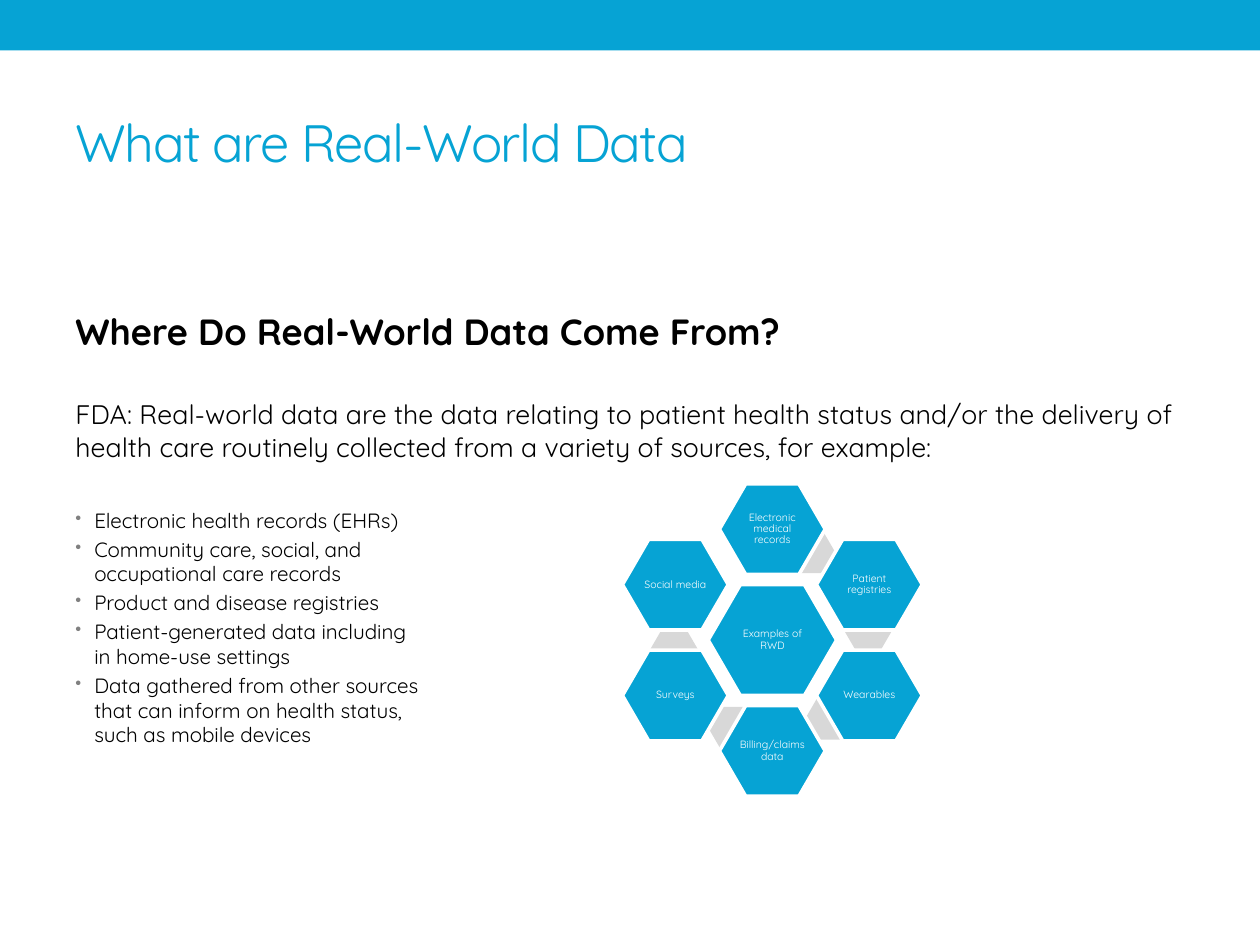
from lxml.etree import SubElement
from pptx import Presentation
from pptx.dml.color import RGBColor
from pptx.enum.shapes import MSO_SHAPE
from pptx.enum.text import MSO_ANCHOR, PP_ALIGN
from pptx.oxml.ns import qn
from pptx.util import Inches, Pt

COLORS = {"blue": "06A3D4", "gray": "D8D8D8", "dot": "808080", "white": "FFFFFF", "black": "000000"}
FONT = "Quicksand"
UNIT = 0.1
MID = (61.3, 50.8)
STEP = (7.7, 4.4)
RING = [
    ("Electronic medical records", 0, -2, (3.1, -6.95)),
    ("Patient registries", 1, -1, (7.6, -0.75)),
    ("Wearables", 1, 1, (4.5, 6.25)),
    ("Billing/claims data", 0, 2, (-3.2, 6.95)),
    ("Surveys", -1, 1, (-7.8, 0.75)),
    ("Social media", -1, -1, None),
]
LEAD = (
    "FDA: Real-world data are the data relating to patient health status and/or the delivery "
    "of health care routinely collected from a variety of sources, for example:"
)
ITEMS = [
    "Electronic health records (EHRs)",
    "Community care, social, and \voccupational care records",
    "Product and disease registries",
    "Patient-generated data including \vin home-use settings",
    "Data gathered from other sources \vthat can inform on health status, \vsuch as mobile devices",
]


class Deck:
    """Holds the style and the current slide, measured in grid columns and rows."""

    def __init__(self, cols, rows):
        self.show = Presentation()
        self.show.slide_width, self.show.slide_height = self.span(cols, rows)
        self.slide = self.show.slides.add_slide(self.show.slide_layouts[6])

    def span(self, *cells):
        return [Inches(cell * UNIT) for cell in cells]

    def tint(self, name):
        return RGBColor.from_string(COLORS[name])

    def apply(self, item, form):
        for key, value in form.items():
            setattr(item, key, value)

    def words(self, para, text, size, color, space=0, bold=False, **form):
        para.text = text
        self.apply(para, form)
        for run in para.runs:
            self.apply(run.font, {"name": FONT, "size": Pt(size), "bold": bold})
            run.font.color.rgb = self.tint(color)
            if space:
                run._r.get_or_add_rPr().set("spc", str(space))

    def bullet(self, para, inset):
        props = para._p.get_or_add_pPr()
        props.set("marL", str(Inches(inset)))
        props.set("indent", str(-Inches(inset)))
        hue = SubElement(props, qn("a:buClr"))
        SubElement(hue, qn("a:srgbClr")).set("val", COLORS["dot"])
        SubElement(props, qn("a:buSzPct")).set("val", "85000")
        SubElement(props, qn("a:buChar")).set("char", "•")

    def box(self, left, top, width, height, anchor=MSO_ANCHOR.TOP):
        frame = self.slide.shapes.add_textbox(*self.span(left, top, width, height)).text_frame
        self.apply(frame, {"word_wrap": True, "vertical_anchor": anchor})
        return frame

    def shape(self, kind, left, top, width, height, color):
        shape = self.slide.shapes.add_shape(kind, *self.span(left, top, width, height))
        shape.shadow.inherit = False
        shape.fill.solid()
        shape.fill.fore_color.rgb = self.tint(color)
        shape.line.fill.background()
        return shape

    def hexa(self, mid, width, height, color, text=None):
        left, top = mid[0] - width / 2, mid[1] - height / 2
        shape = self.shape(MSO_SHAPE.HEXAGON, left, top, width, height, color)
        shape.adjustments[0] = 0.29
        if text:
            shape.line.color.rgb = self.tint("white")
            shape.line.width = Pt(2.08)
            frame = shape.text_frame
            sides = ("left", "right", "top", "bottom")
            self.apply(frame, {f"margin_{side}": Inches(0.01) for side in sides})
            self.apply(frame, {"word_wrap": True, "vertical_anchor": MSO_ANCHOR.MIDDLE})
            self.words(frame.paragraphs[0], text, 6, "white",
                       alignment=PP_ALIGN.CENTER, line_spacing=0.9)


def main():
    deck = Deck(100, 75)
    deck.shape(MSO_SHAPE.RECTANGLE, 0, 0, 100, 4, "blue")
    title = deck.box(5, 5.8, 90, 10.8, MSO_ANCHOR.MIDDLE)
    deck.words(title.paragraphs[0], "What are Real-World Data", 30, "blue", space=-80)

    body = deck.box(5, 23.9, 90, 37.4)
    deck.words(body.paragraphs[0], "Where Do Real-World Data Come From?", 20.8, "black",
               bold=True, line_spacing=Pt(26))
    deck.words(body.add_paragraph(), LEAD, 15.3, "black",
               line_spacing=Pt(18.3), space_before=Pt(26))
    for rank, item in enumerate(ITEMS):
        para = body.add_paragraph()
        deck.bullet(para, 0.15)
        deck.words(para, item, 11.8, "black",
                   line_spacing=Pt(14), space_before=Pt(2.6 if rank else 26))

    deck.hexa(MID, 10.2, 8.8, "blue", "Examples of RWD")
    for text, col, row, link in RING:
        if link:
            deck.hexa((MID[0] + link[0], MID[1] + link[1]), 3.8, 3.3, "gray")
        deck.hexa((MID[0] + col * STEP[0], MID[1] + row * STEP[1]), 8.4, 7.2, "blue", text)
    deck.show.save("out.pptx")


if __name__ == "__main__":
    main()
